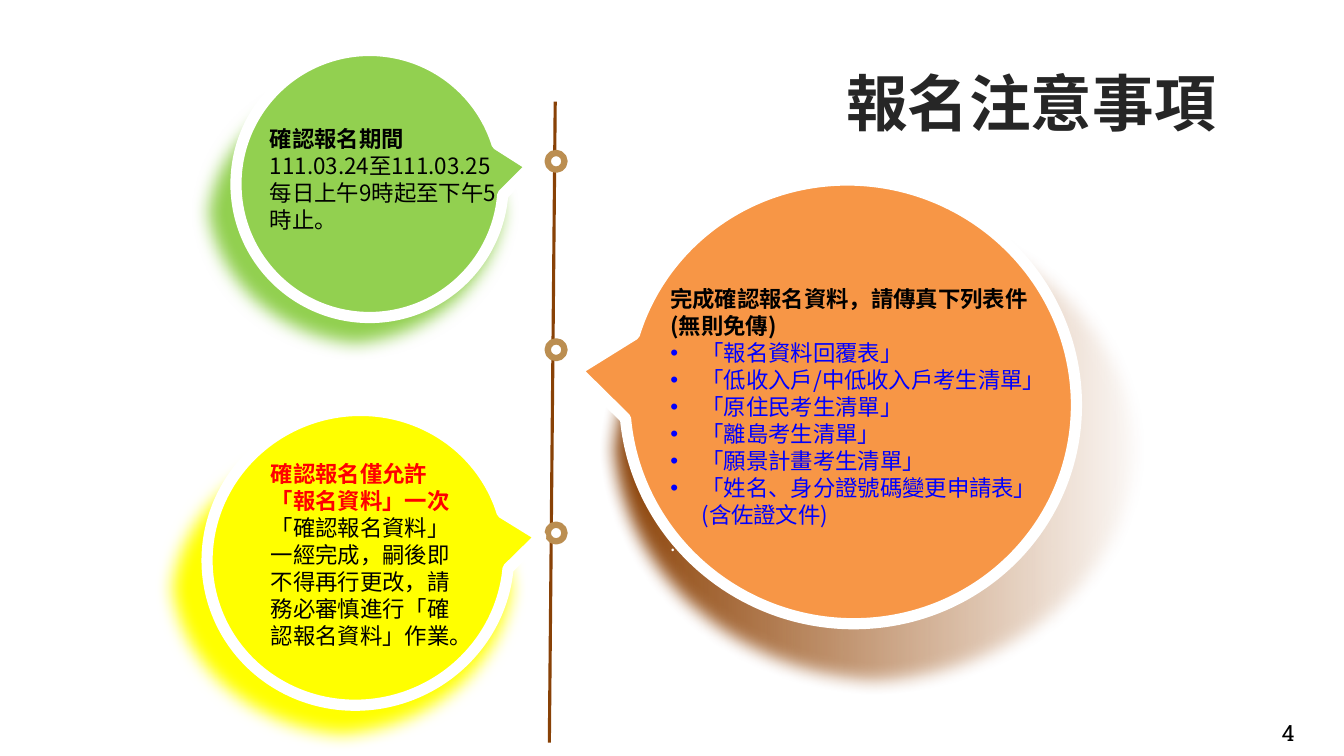
from dataclasses import dataclass
from lxml.etree import SubElement as Sub
from pptx import Presentation
from pptx.dml.color import RGBColor as Rgb
from pptx.enum.shapes import MSO_CONNECTOR as Link, MSO_SHAPE as Kind
from pptx.enum.text import MSO_ANCHOR as Anchor, MSO_AUTO_SIZE as Fit, PP_ALIGN as Align
from pptx.oxml.ns import qn
from pptx.util import Inches, Pt


@dataclass(frozen=True)
class Theme:
    sans: str = "Noto Sans CJK SC"
    slab: str = "Roboto Slab"
    title: float = 44
    text: float = 16
    small: float = 14
    lead: float = 19.3
    ring: float = 8
    blur: float = 12.5
    ink: str = "000000"
    head: str = "262626"
    white: str = "FFFFFF"
    red: str = "FF0000"
    blue: str = "0000FF"
    green: str = "92D050"
    gold: str = "FFFF00"
    rust: str = "F79646"
    dark: str = "863C00"
    fade: str = "9E4800"
    axis: str = "884106"
    dot: str = "BB8E51"


T = Theme()
WIDE, HIGH = Inches(13.33), Inches(7.5)
COLS, ROWS = 160, 90


def place(box):
    x, y, w, h = box
    return [round(v) for v in (x * WIDE / COLS, y * HIGH / ROWS,
                               w * WIDE / COLS, h * HIGH / ROWS)]


def share(box, part):
    x, y, w, h = box
    a, b, c, d = part
    return x + a * w, y + b * h, c * w, d * h


def move(shape, box):
    shape.left, shape.top, shape.width, shape.height = place(box)


def style(para, size, color, bold=False, face=T.sans):
    font = para.font
    font.name, font.size, font.bold = face, Pt(size), bold
    font.color.rgb = Rgb.from_string(color)
    base = para._p.pPr.find(qn("a:defRPr"))
    Sub(base, qn("a:ea"), typeface=face)


def shape(slide, kind, box, fill, line=None, width=0):
    item = slide.shapes.add_shape(kind, *place(box))
    item.shadow.inherit = False
    item.fill.solid()
    item.fill.fore_color.rgb = Rgb.from_string(fill)
    if line:
        item.line.color.rgb = Rgb.from_string(line)
        item.line.width = Pt(width)
    else:
        item.line.fill.background()
    return item


def write(frame, rows):
    frame.word_wrap = True
    frame.auto_size = Fit.NONE
    frame.vertical_anchor = Anchor.TOP
    for i, (text, size, color, bold, mark) in enumerate(rows):
        para = frame.paragraphs[0] if i == 0 else frame.add_paragraph()
        para.text = text
        para.alignment = Align.LEFT
        para.line_spacing = Pt(T.lead)
        para.space_before = Pt(0)
        props = para._p.get_or_add_pPr()
        dent = Inches(0.31) if mark else 0
        props.set("marL", str(dent))
        props.set("indent", str(-dent))
        if mark:
            Sub(props, qn("a:buFont"), typeface="Arial")
            Sub(props, qn("a:buChar"), char="•")
        else:
            Sub(props, qn("a:buNone"))
        style(para, size, color, bold)


def blend(item):
    item.fill.gradient()
    item.fill.gradient_angle = 0
    for stop, color, pos in zip(item.fill.gradient_stops, (T.dark, T.fade), (0, 1)):
        stop.color.rgb = Rgb.from_string(color)
        stop.position = pos
    tint = item._element.spPr.findall(".//" + qn("a:srgbClr"))[-1]
    Sub(tint, qn("a:alpha"), val="0")


def bubble(slide, box, color, turn, tip, shade, area, rows, body=None):
    glow = shape(slide, Kind.OVAL, share(box, shade), color)
    if body is not None:
        blend(glow)
    soft = glow._element.spPr.find(qn("a:effectLst"))
    Sub(soft, qn("a:softEdge"), rad=str(Pt(T.blur)))
    call = shape(slide, Kind.OVAL_CALLOUT, box, color, T.white, T.ring)
    call.adjustments[0], call.adjustments[1] = tip, 0.594
    call.rotation = turn
    spot = share(box, area)
    if body is None:
        body = slide.shapes.add_textbox(*place(spot))
    else:
        move(body, spot)
        body._element.getparent().append(body._element)
    write(body.text_frame, rows)


def header(slide, box):
    title = slide.shapes.title
    move(title, box)
    title.text = "報名注意事項"
    title.text_frame.vertical_anchor = Anchor.MIDDLE
    para = title.text_frame.paragraphs[0]
    para.alignment = Align.CENTER
    style(para, T.title, T.head, True)


def axis(slide, box):
    x, y, w, h = place(box)
    line = slide.shapes.add_connector(Link.STRAIGHT, x + w, y, x, y + h)
    line.line.color.rgb = Rgb.from_string(T.axis)
    line.line.width = Pt(2.25)
    Sub(line._element.spPr, qn("a:effectLst"))
    for part in (0.08, 0.374, 0.66):
        spot = (box[0] - 0.2, box[1] + part * box[3], 2, 2)
        shape(slide, Kind.OVAL, spot, T.white, T.dot, 4.5)


def footer(slide, box):
    note = slide.shapes.add_textbox(*place(box))
    note.text_frame.word_wrap = True
    para = note.text_frame.paragraphs[0]
    para.text = "4"
    style(para, T.text, T.ink, face=T.slab)


def main():
    deck = Presentation()
    deck.slide_width, deck.slide_height = WIDE, HIGH
    slide = deck.slides.add_slide(deck.slide_layouts[1])
    header(slide, (91.6, 7.9, 62.3, 8.5))
    footer(slide, (151.4, 85, 8.3, 4.4))
    axis(slide, (65.4, 12.1, 0.7, 76.3))
    bubble(slide, (28.1, 6, 31.8, 31.8), T.green, 250.8, -0.136,
           (-0.17, 0.05, 1.23, 1.11), (0.09, 0.26, 0.96, 0.55), [
               ("確認報名期間", T.text, T.ink, True, False),
               ("111.03.24至111.03.25每日上午9時起至下午5時止。", T.text, T.ink, False, False)])
    bubble(slide, (25.1, 48.4, 35, 36), T.gold, 250.8, -0.136,
           (-0.19, 0.06, 1.27, 1.08), (0.17, 0.16, 0.7, 0.75), [
               ("確認報名僅允許「報名資料」一次", T.text, T.red, True, False),
               ("「確認報名資料」一經完成，嗣後即不得再行更改，請務必審慎進行「確認報名資料」作業。",
                T.text, T.ink, False, False)])
    forms = ["「報名資料回覆表」", "「低收入戶/中低收入戶考生清單」", "「原住民考生清單」",
             "「離島考生清單」", "「願景計畫考生清單」", "「姓名、身分證號碼變更申請表」(含佐證文件)"]
    bubble(slide, (74.9, 20.9, 52.7, 53.9), T.rust, 109.2, 0.136,
           (-0.07, 0.06, 1.26, 1.09), (0.07, 0.23, 0.92, 0.61), [
               ("完成確認報名資料，請傳真下列表件(無則免傳)", T.text, T.ink, True, False),
               *((form, T.text, T.blue, False, True) for form in forms),
               (".", T.small, T.white, False, False)], slide.placeholders[1])
    deck.save("out.pptx")


if __name__ == "__main__":
    main()
